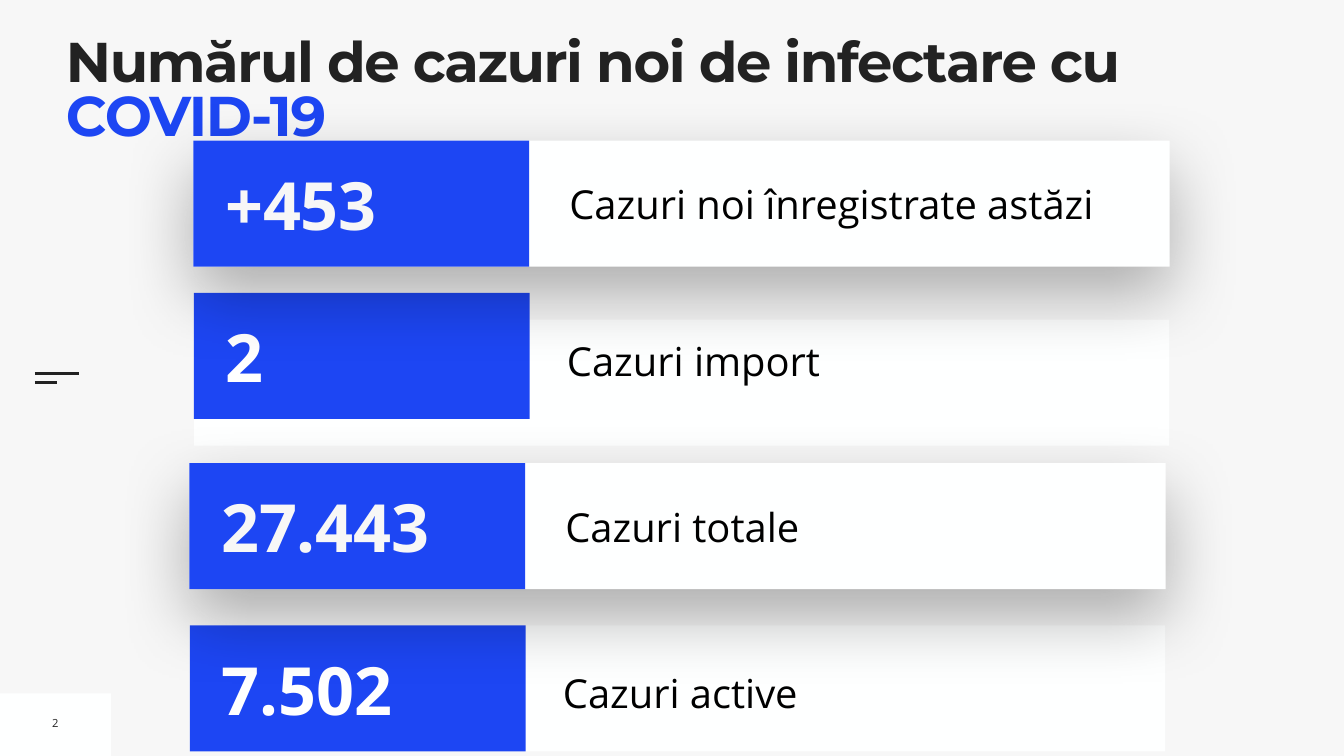
from lxml import etree
from pptx import Presentation
from pptx.dml.color import RGBColor
from pptx.enum import shapes, text
from pptx.oxml.ns import qn
from pptx.util import Inches, Pt

BLUE, INK, PAPER, WHITE, BLACK = "1D46F3", "222222", "F7F7F7", "FEFFFF", "000000"


def color(hex_code):
    return RGBColor.from_string(hex_code)


def write(paragraph, content, size=57, font="Open Sans", fill=BLACK, bold=False, spacing=None):
    run = paragraph.add_run()
    run.text = content
    run.font.size = Pt(size)
    run.font.name = font
    run.font.bold = bold
    run.font.color.rgb = color(fill)
    if spacing is not None:
        run._r.get_or_add_rPr().set("spc", str(int(spacing * 100)))


class Deck:
    def __init__(self, width, height):
        self.presentation = Presentation()
        self.presentation.slide_width = Inches(width)
        self.presentation.slide_height = Inches(height)
        self.slide = self.presentation.slides.add_slide(self.presentation.slide_layouts[6])
        background = self.slide.background.fill
        background.solid()
        background.fore_color.rgb = color(PAPER)

    def rectangle(self, left, top, width, height, fill, parent=None, shadow=False):
        box = (parent or self.slide).shapes.add_shape(
            shapes.MSO_SHAPE.RECTANGLE, Inches(left), Inches(top), Inches(width), Inches(height))
        box.fill.solid()
        box.fill.fore_color.rgb = color(fill)
        box.line.fill.background()
        box.shadow.inherit = False
        if shadow:
            self.drop_shadow(box)

    def drop_shadow(self, box):
        effects = box._element.spPr.find(qn("a:effectLst"))
        outer = etree.SubElement(effects, qn("a:outerShdw"), blurRad=str(Pt(100)),
                                 dist=str(Pt(40)), dir=str(90 * 60000), rotWithShape="0")
        tint = etree.SubElement(outer, qn("a:srgbClr"), val=BLACK)
        etree.SubElement(tint, qn("a:alpha"), val="30000")

    def text_box(self, left, top, width, height, parent=None, inset=0.1, wrap=True,
                 anchor=text.MSO_ANCHOR.MIDDLE):
        frame = (parent or self.slide).shapes.add_textbox(
            Inches(left), Inches(top), Inches(width), Inches(height)).text_frame
        frame.margin_left = frame.margin_right = Inches(inset)
        frame.margin_top = frame.margin_bottom = Inches(inset)
        frame.word_wrap = wrap
        frame.vertical_anchor = anchor
        return frame.paragraphs[0]

    def rule(self, left, y, length):
        line = self.slide.shapes.add_connector(
            shapes.MSO_CONNECTOR.STRAIGHT, Inches(left), Inches(y), Inches(left + length), Inches(y))
        line.line.color.rgb = color(INK)
        line.line.width = Pt(3)
        etree.SubElement(line._element.spPr, qn("a:effectLst"))

    def card(self, left, top, number, label, raised=False, strip_drop=0):
        """A blue number block on a white strip; raised cards cast a shadow."""
        group = self.slide.shapes.add_group_shape()
        self.rectangle(left, top + strip_drop, 19.37 if raised else 19.35, 2.5, WHITE, group, raised)
        if raised:
            caption = self.text_box(left + 7.36, top + 0.67, 11.76, 1.16, group)
        else:
            caption = self.text_box(left + 7.4, top + 0.57, 11.58, 1.25, group, inset=0)
            caption.line_spacing = 1.3
            caption.space_before = Pt(20)
        write(caption, label)
        self.rectangle(left, top, 6.66, 2.5, BLUE, group)
        figure = self.text_box(left + 0.53, top + 0.35, 6.03, 1.8, group)
        write(figure, number, size=95, fill=PAPER if raised else "FFFFFF", bold=True)


def main():
    deck = Deck(26.67, 15)

    # Page number and side mark
    deck.rectangle(0, 13.76, 2.2, 1.24, WHITE)
    deck.rule(0.69, 7.41, 0.88)
    deck.rule(0.69, 7.59, 0.44)
    page = deck.text_box(0.93, 14.09, 0.34, 0.51, wrap=False)
    page.alignment = text.PP_ALIGN.CENTER
    write(page, "2", size=16, fill=INK)

    # Imported cases, below the title
    deck.card(3.85, 5.81, "2", "Cazuri import", strip_drop=0.53)

    # Title
    title = deck.text_box(1.31, 0.78, 23.94, 1.58, inset=0, anchor=text.MSO_ANCHOR.TOP)
    title.line_spacing = 0.8
    heading = dict(size=80, font="Montserrat", bold=True, spacing=-2)
    write(title, "Numărul de cazuri noi de infectare cu ", fill=INK, **heading)
    write(title, "COVID-19", fill=BLUE, **heading)

    # Remaining cards; the raised ones come last so their shadows fall on the others
    deck.card(3.77, 12.41, "7.502", "Cazuri active")
    deck.card(3.84, 2.79, "+453", "Cazuri noi înregistrate astăzi", raised=True)
    deck.card(3.76, 9.19, "27.443", "Cazuri totale", raised=True)

    deck.presentation.save("out.pptx")


if __name__ == "__main__":
    main()
